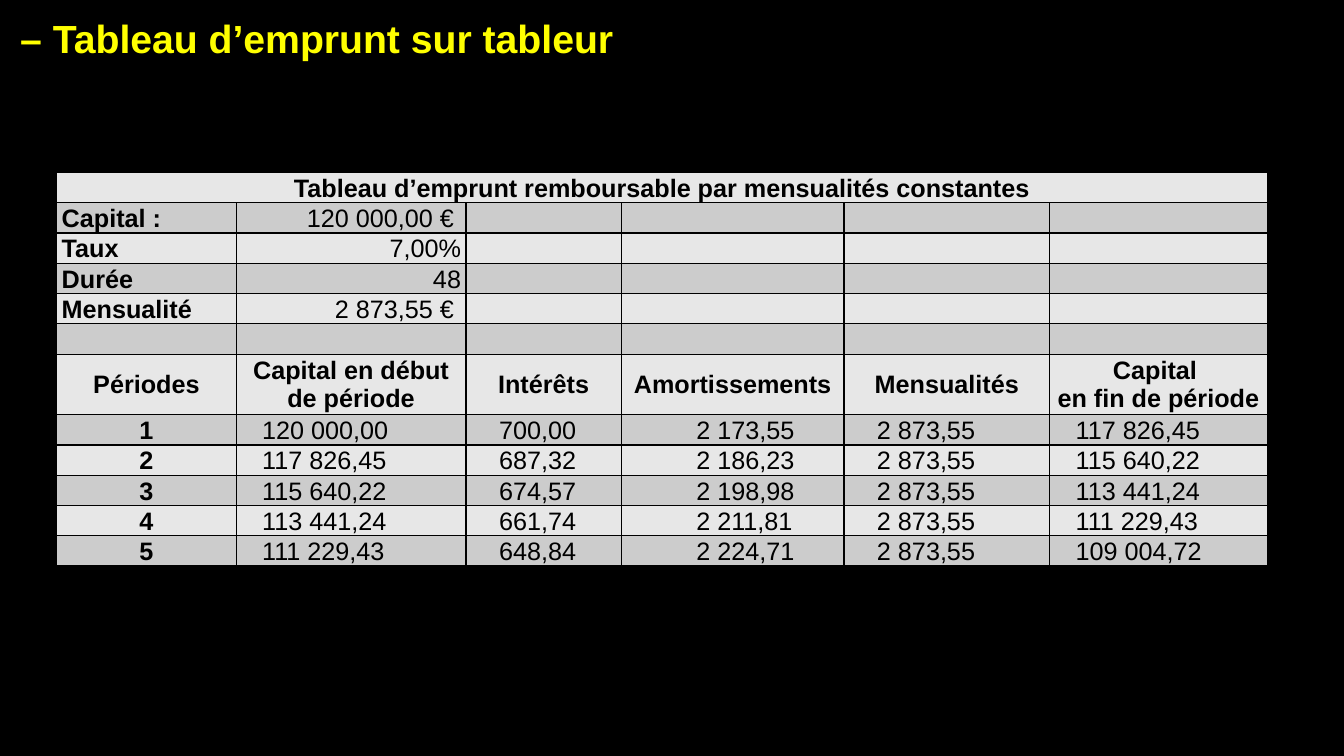
from lxml.etree import SubElement
from pptx import Presentation
from pptx.dml.color import RGBColor
from pptx.enum.text import MSO_ANCHOR as Anchor, MSO_AUTO_SIZE as AutoSize, PP_ALIGN as Align
from pptx.oxml.ns import qn
from pptx.util import Pt

TITLE_ONLY = 5
HEADING = "Tableau d’emprunt remboursable par mensualités constantes"
LOAN_TERMS = [
    ("Capital :", "120 000,00 €", 5),
    ("Taux", "7,00%", 0),
    ("Durée", "48", 0),
    ("Mensualité", "2 873,55 €", 5),
]
COLUMN_TITLES = ["Périodes", "Capital en début de période", "Intérêts",
                 "Amortissements", "Mensualités", "Capital \nen fin de période"]
COLUMN_WIDTHS = [128.2, 164.2, 110.9, 159.1, 146.9, 155.5]
AMOUNT_INDENTS = [15, 20, 50, 20, 15]
PAYMENT = "2 873,55"
BALANCES = ["120 000,00", "117 826,45", "115 640,22", "113 441,24", "111 229,43", "109 004,72"]
INTERESTS = ["700,00", "687,32", "674,57", "661,74", "648,84"]
REPAYMENTS = ["2 173,55", "2 186,23", "2 198,98", "2 211,81", "2 224,71"]
HEADER_ROW = len(LOAN_TERMS) + 2
ROW_COUNT = HEADER_ROW + 1 + len(INTERESTS)


def color(hex_string):
    return RGBColor.from_string(hex_string)


class LoanSlide:
    font = "Arial"
    ink = "000000"
    title_color = "FFFF00"
    bands = ["E7E7E7", "CCCCCC"]
    row_height = 21.6
    padding = 3.6

    def __init__(self, deck):
        self.page = deck.slides.add_slide(deck.slide_layouts[TITLE_ONLY])
        fill = self.page.background.fill
        fill.solid()
        fill.fore_color.rgb = color(self.ink)

    def span(self, para, text, size, tint, bold):
        span = para.add_run()
        span.text = text
        span.font.name = self.font
        span.font.size = Pt(size)
        span.font.bold = bold
        span.font.color.rgb = color(tint)

    def title(self, text):
        box = self.page.shapes.title
        box.left, box.top, box.width, box.height = Pt(7.2), Pt(6.5), Pt(872), Pt(41)
        frame = box.text_frame
        frame.word_wrap = True
        frame.auto_size = AutoSize.SHAPE_TO_FIT_TEXT
        frame.vertical_anchor = Anchor.TOP
        para = frame.paragraphs[0]
        para.alignment = Align.LEFT
        para.space_before, para.space_after = Pt(12), Pt(6)
        self.span(para, text, 28, self.title_color, True)

    def table(self, left, top):
        """Add the banded, bordered grid with every cell still empty."""
        frame = self.page.shapes.add_table(
            ROW_COUNT, len(COLUMN_WIDTHS), Pt(left), Pt(top),
            Pt(sum(COLUMN_WIDTHS)), Pt(self.row_height * (ROW_COUNT + 1)))
        table = frame.table
        table.first_row = table.horz_banding = False
        for column, width in zip(table.columns, COLUMN_WIDTHS):
            column.width = Pt(width)
        for index, row in enumerate(table.rows):
            row.height = Pt(self.row_height * (2 if index == HEADER_ROW else 1))
            for cell in row.cells:
                self.cell_style(cell, self.bands[index % 2])
        return table

    def cell_style(self, cell, band):
        cell.margin_left = cell.margin_right = Pt(self.padding)
        cell.margin_top = cell.margin_bottom = 0
        cell.vertical_anchor = Anchor.BOTTOM
        properties = cell._tc.get_or_add_tcPr()
        for side in ("lnL", "lnR", "lnT", "lnB"):
            border = SubElement(properties, qn(f"a:{side}"), w=str(Pt(1)))
            paint = SubElement(border, qn("a:solidFill"))
            SubElement(paint, qn("a:srgbClr"), val=self.ink)
        cell.fill.solid()
        cell.fill.fore_color.rgb = color(band)
        # A small end mark keeps empty rows from growing
        cell.text_frame.paragraphs[0]._p.get_or_add_endParaRPr().set("sz", "1200")

    def cell_text(self, cell, text, bold=False, align=Align.LEFT, indent=0):
        """Write a cell; indent pushes the text away from the side it is aligned to."""
        if align == Align.RIGHT:
            cell.margin_right = Pt(self.padding + indent)
        else:
            cell.margin_left = Pt(self.padding + indent)
        para = cell.text_frame.paragraphs[0]
        para.alignment = align
        for index, line in enumerate(text.split("\n")):
            if index:
                para.add_line_break()
            self.span(para, line, 18, self.ink, bold)


def main():
    deck = Presentation()
    deck.slide_width, deck.slide_height = Pt(960), Pt(540)
    slide = LoanSlide(deck)
    slide.title("– Tableau d’emprunt sur tableur")
    table = slide.table(40.5, 123.2)

    table.cell(0, 0).merge(table.cell(0, len(COLUMN_WIDTHS) - 1))
    slide.cell_text(table.cell(0, 0), HEADING, True, Align.CENTER)

    for row, (label, value, indent) in enumerate(LOAN_TERMS, 1):
        slide.cell_text(table.cell(row, 0), label, True)
        slide.cell_text(table.cell(row, 1), value, align=Align.RIGHT, indent=indent)

    for column, text in enumerate(COLUMN_TITLES):
        cell = table.cell(HEADER_ROW, column)
        cell.vertical_anchor = Anchor.MIDDLE
        slide.cell_text(cell, text, True, Align.CENTER)

    periods = zip(BALANCES, INTERESTS, REPAYMENTS, BALANCES[1:])
    for period, (opening, interest, repayment, closing) in enumerate(periods, 1):
        row = HEADER_ROW + period
        slide.cell_text(table.cell(row, 0), str(period), True, Align.CENTER)
        amounts = [opening, interest, repayment, PAYMENT, closing]
        for column, (amount, indent) in enumerate(zip(amounts, AMOUNT_INDENTS), 1):
            slide.cell_text(table.cell(row, column), amount, indent=indent)

    deck.save("out.pptx")


if __name__ == "__main__":
    main()
